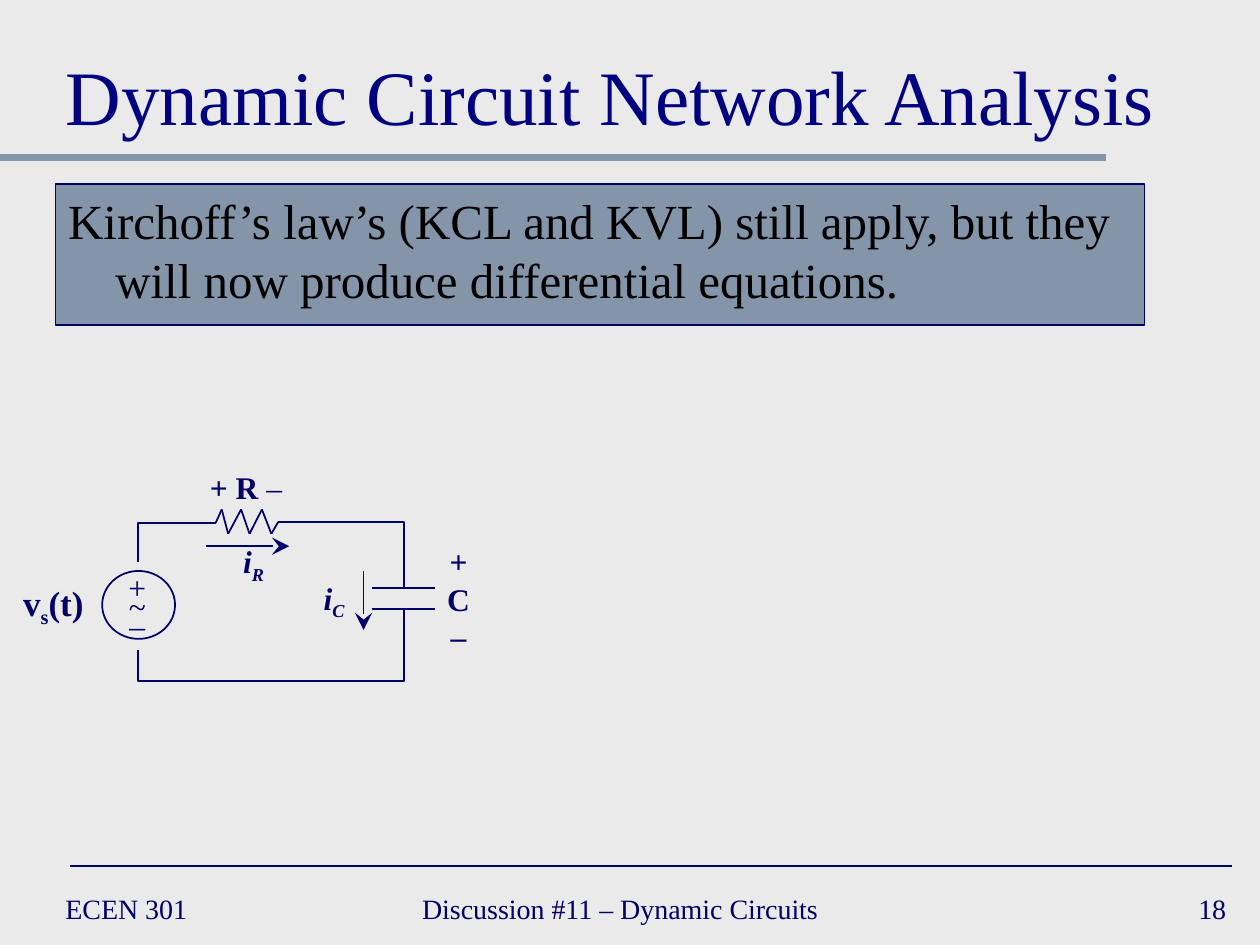
from itertools import pairwise

from lxml import etree
from pptx import Presentation
from pptx.dml.color import RGBColor
from pptx.enum.shapes import MSO_CONNECTOR, MSO_SHAPE
from pptx.enum.text import MSO_ANCHOR, MSO_AUTO_SIZE, PP_ALIGN
from pptx.oxml.ns import qn
from pptx.util import Cm, Pt

PAPER = RGBColor(0xEA, 0xEA, 0xEA)
STEEL = RGBColor(0x84, 0x95, 0xA9)
NAVY = RGBColor(0x00, 0x00, 0x66)
BLUE = RGBColor(0x00, 0x00, 0x80)
BLACK = RGBColor(0x00, 0x00, 0x00)

STRAIGHT = MSO_CONNECTOR.STRAIGHT
ELBOW = MSO_CONNECTOR.ELBOW
OVAL = MSO_SHAPE.OVAL
LEFT, CENTER, RIGHT = PP_ALIGN.LEFT, PP_ALIGN.CENTER, PP_ALIGN.RIGHT
TOP, MIDDLE, BOTTOM = MSO_ANCHOR.TOP, MSO_ANCHOR.MIDDLE, MSO_ANCHOR.BOTTOM
FIXED, GROW = MSO_AUTO_SIZE.NONE, MSO_AUTO_SIZE.SHAPE_TO_FIT_TEXT

PLAIN = {"name": "Times New Roman", "bold": False, "italic": False}
BOLD = {"bold": True}
SLANT = {"bold": True, "italic": True}
SUB = "-25000"


class Sheet:
    def __init__(self, slide):
        self.slide = slide
        self.shapes = slide.shapes
        fill = slide.background.fill
        fill.solid()
        fill.fore_color.rgb = PAPER

    def style(self, font, size, color=NAVY, **format):
        for key, value in {**PLAIN, "size": Pt(size), **format}.items():
            setattr(font, key, value)
        font.color.rgb = color

    def stroke(self, line, color=NAVY, width=1):
        line.color.rgb = color
        line.width = Pt(width)

    def line(self, start, end, color=NAVY, width=1, kind=STRAIGHT):
        link = self.shapes.add_connector(kind, *map(Cm, start + end))
        self.stroke(link.line, color, width)
        etree.SubElement(link._element.spPr, qn("a:effectLst"))
        return link

    def arrow(self, start, end):
        edge = self.line(start, end).line._get_or_add_ln()
        etree.SubElement(edge, qn("a:tailEnd"), type="stealth", w="lg", len="lg")

    def bend(self, start, end):
        link = self.line(start, end, kind=ELBOW)
        link._element.spPr.find(qn("a:prstGeom")).set("prst", "bentConnector2")

    def wire(self, points):
        first, *rest = [tuple(map(Cm, point)) for point in points]
        pen = self.shapes.build_freeform(*first)
        pen.add_line_segments(rest, close=False)
        self.outline(pen.convert_to_shape())

    def ring(self, box):
        self.outline(self.shapes.add_shape(OVAL, *map(Cm, box)))

    def outline(self, shape):
        shape.shadow.inherit = False
        shape.fill.background()
        self.stroke(shape.line)

    def label(self, box, lines, size=18, align=CENTER, anchor=TOP, wrap=False):
        frame = self.shapes.add_textbox(*map(Cm, box)).text_frame
        frame.word_wrap = wrap
        frame.auto_size = FIXED if wrap else GROW
        frame.vertical_anchor = anchor
        for index, runs in enumerate(lines):
            para = frame.add_paragraph() if index else frame.paragraphs[0]
            para.alignment = align
            for text, format, shift in runs:
                run = para.add_run()
                run.text = text
                self.style(run.font, size, **format)
                if shift:
                    run._r.get_or_add_rPr().set("baseline", shift)

    def holder(self, shape, box, text, size, color, anchor):
        for side, value in zip(("left", "top", "width", "height"), box):
            setattr(shape, side, Cm(value))
        frame = shape.text_frame
        frame.text = text
        frame.word_wrap = True
        frame.auto_size = FIXED
        frame.vertical_anchor = anchor
        para = frame.paragraphs[0]
        para.alignment = LEFT
        para.space_before = Pt(0)
        self.style(para.runs[0].font, size, color)
        return para

    def title(self, box, text):
        self.holder(self.shapes.title, box, text, 44, BLUE, BOTTOM)

    def body(self, box, text):
        shape = self.slide.placeholders[1]
        para = self.holder(shape, box, text, 28, BLACK, TOP)
        props = para._p.get_or_add_pPr()
        props.set("marL", str(Cm(0.95)))
        props.set("indent", str(-Cm(0.95)))
        etree.SubElement(props, qn("a:buNone"))
        shape.fill.solid()
        shape.fill.fore_color.rgb = STEEL
        self.stroke(shape.line, NAVY, 0.75)


def main():
    deck = Presentation()
    deck.slide_width, deck.slide_height = Cm(25.4), Cm(19.05)
    sheet = Sheet(deck.slides.add_slide(deck.slide_layouts[1]))

    sheet.line((0, 3.18), (22.3, 3.18), STEEL, 4)
    sheet.line((1.42, 17.46), (24.84, 17.46))
    for left, width, text, align in (
        (1.07, 5.51, "ECEN 301", LEFT),
        (8.26, 9.73, "Discussion #11 – Dynamic Circuits", LEFT),
        (19.69, 5.28, "18", RIGHT),
    ):
        box = (left, 17.78, width, 1.07)
        sheet.label(box, [[(text, {}, None)]], 16, align, MIDDLE, True)

    sheet.title((1.07, 0.43, 23.29, 2.54), "Dynamic Circuit Network Analysis")
    sheet.body(
        (1.12, 3.71, 21.95, 2.84),
        "Kirchoff’s law’s (KCL and KVL) still apply, "
        "but they will now produce differential equations.",
    )

    high, low = 10.27, 10.76
    zigzag = [(4.35, 10.54), (4.47, high), (4.6, low), (4.86, high),
              (5.03, low), (5.28, high), (5.47, low), (5.61, 10.52)]
    for start, end in pairwise(zigzag):
        sheet.line(start, end)

    sheet.bend((4.35, 10.54), (2.79, 11.33))
    sheet.bend((5.61, 10.52), (8.14, 11.86))
    sheet.wire([(2.79, 13.11), (2.79, 13.73), (8.14, 13.73), (8.14, 12.28)])
    for plate in (11.86, 12.28):
        sheet.line((7.49, plate), (8.76, plate))
    sheet.arrow((4.16, 11.01), (5.83, 11.01))
    sheet.arrow((7.33, 11.51), (7.33, 12.7))
    sheet.ring((2.06, 11.51, 1.47, 1.37))

    sheet.label((3.81, 9.32, 2.3, 1.02), [[("+ R ", BOLD, None), ("–", {}, None)]])
    for left, top, name in ((4.63, 10.8, "R"), (6.25, 11.54, "C")):
        sheet.label((left, top, 0.97, 1.02), [[("i", SLANT, None), (name, SLANT, SUB)]])
    sheet.label((8.76, 10.8, 0.97, 2.54), [[(mark, BOLD, None)] for mark in "+C–"])
    source = [("v", BOLD, None), ("s", BOLD, SUB), ("(t)", BOLD, None)]
    sheet.label((0.15, 11.59, 1.85, 1.09), [source], 20)
    sheet.label((2.34, 11.33, 0.86, 1.78), [[(mark, {}, None)] for mark in "+–"])
    sheet.label((2.34, 11.71, 0.86, 1.02), [[("~", {}, None)]])

    deck.save("out.pptx")


if __name__ == "__main__":
    main()
